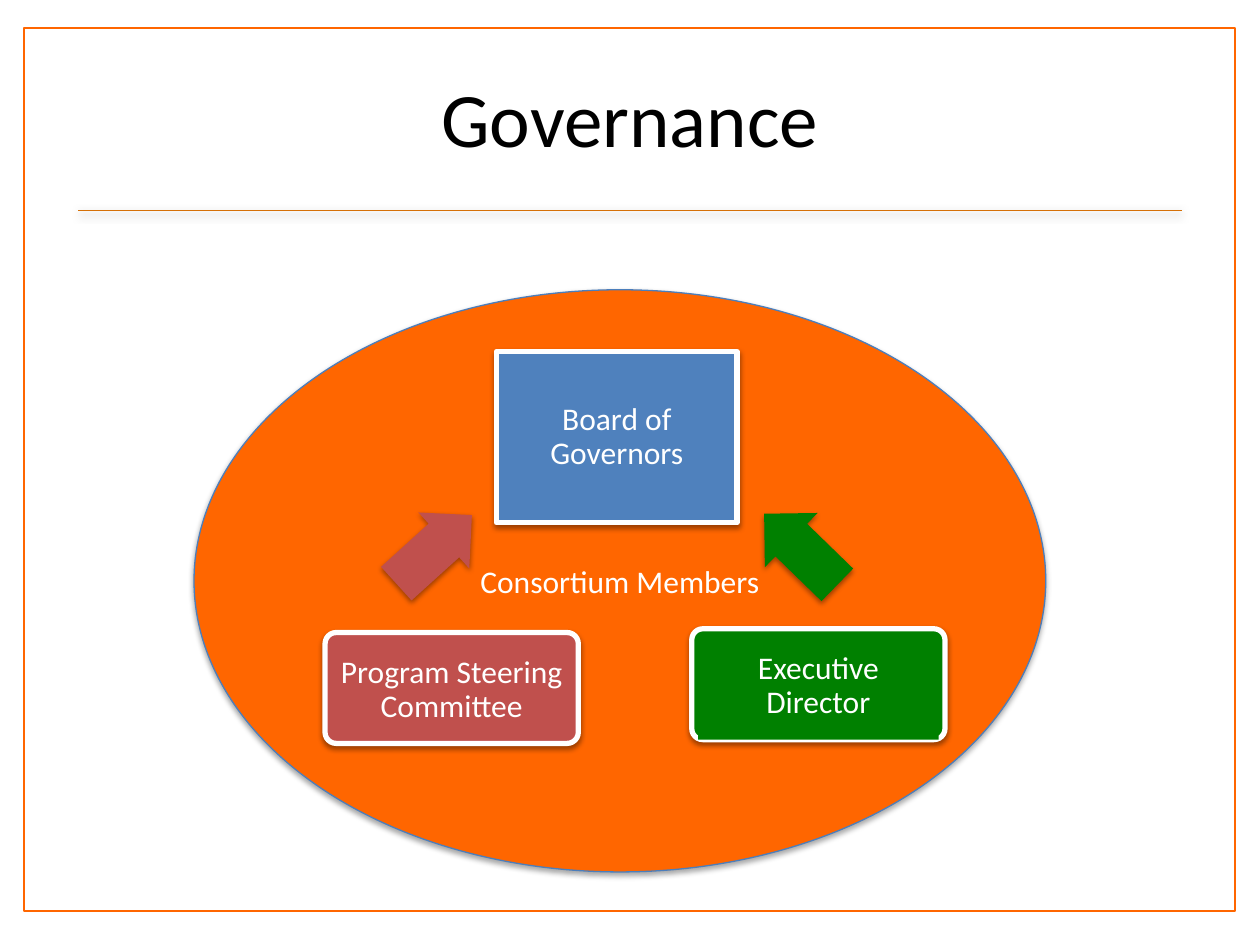
from dataclasses import dataclass
from typing import Optional

from lxml import etree
from pptx import Presentation
from pptx import util as u
from pptx.dml.color import RGBColor
from pptx.enum import shapes, text
from pptx.oxml.ns import qn

PX = u.Inches(1) // 100  # 100 px to the inch


@dataclass(frozen=True)
class Theme:
    font: str = "Calibri"
    title_size: int = 44
    body_size: int = 18
    ink: str = "000000"
    paper: str = "FFFFFF"
    orange: str = "FF6600"
    rule: str = "D57007"
    outline: str = "4B7EBC"
    blue: str = "4F81BD"
    red: str = "C0504D"
    green: str = "008000"


@dataclass(frozen=True)
class Area:
    left: int
    top: int
    width: int
    height: int

    def emu(self) -> tuple:
        return tuple(n * PX for n in (self.left, self.top, self.width, self.height))

    def inset(self, dx: int, dy: int) -> "Area":
        """Narrow both sides by dx and lower the top by dy, keeping the bottom."""
        return Area(self.left + dx, self.top + dy, self.width - 2 * dx, self.height - dy)


@dataclass(frozen=True)
class Shadow:
    alpha: int
    blur: float
    distance: float


@dataclass(frozen=True)
class Office:
    """A body reporting to the board, with the arrow that leads there."""
    name: str
    area: Area
    color: str
    label_fill: Optional[str]
    arrow: Area
    rotation: float


THEME = Theme()
SHAPE = shapes.MSO_SHAPE
RULE_SHADOW = Shadow(35, 5, 1.8)
MEMBERS_SHADOW = Shadow(35, 3.1, 1.8)
BOX_SHADOW = Shadow(38, 3.1, 1.6)

BOARD = Area(394, 279, 191, 136)
OFFICES = [
    Office("Program Steering Committee", Area(258, 502, 201, 88), THEME.red, None,
           Area(304, 406, 81, 60), 137.8),
    Office("Executive Director", Area(549, 499, 201, 88), THEME.green, THEME.green,
           Area(595, 406, 81, 60), 44.2),
]


def rgb(color: str) -> RGBColor:
    return RGBColor.from_string(color)


def cast_shadow(item, shadow: Optional[Shadow]) -> None:
    """Replace the theme shadow by the given one, or by none."""
    properties = item.element.spPr
    effects = properties.find(qn("a:effectLst"))
    if effects is None:
        effects = etree.SubElement(properties, qn("a:effectLst"))
    if shadow:
        outer = etree.SubElement(
            effects, qn("a:outerShdw"), blurRad=str(u.Pt(shadow.blur)),
            dist=str(u.Pt(shadow.distance)), dir="5400000", rotWithShape="0")
        color = etree.SubElement(outer, qn("a:srgbClr"), val="000000")
        etree.SubElement(color, qn("a:alpha"), val=str(shadow.alpha * 1000))


def add_box(page, kind, area: Area, fill: str, line: Optional[str] = None,
            width: float = 1, shadow: Optional[Shadow] = None):
    box = page.shapes.add_shape(kind, *area.emu())
    box.fill.solid()
    box.fill.fore_color.rgb = rgb(fill)
    if line:
        box.line.color.rgb = rgb(line)
        box.line.width = u.Pt(width)
    else:
        box.line.fill.background()
    box.shadow.inherit = False
    cast_shadow(box, shadow)
    return box


def write(box, words: str, size: int, color: str) -> None:
    frame = box.text_frame
    frame.text = words
    frame.word_wrap = True
    frame.vertical_anchor = text.MSO_ANCHOR.MIDDLE
    para = frame.paragraphs[0]
    para.alignment = text.PP_ALIGN.CENTER
    para.font.name = THEME.font
    para.font.size = u.Pt(size)
    para.font.color.rgb = rgb(color)


def write_label(box, words: str) -> None:
    """Write white body text with tight margins and lines."""
    write(box, words, THEME.body_size, THEME.paper)
    frame = box.text_frame
    frame.margin_left = frame.margin_right = 6 * PX
    frame.margin_top = frame.margin_bottom = 6 * PX
    frame.paragraphs[0].line_spacing = 0.9


def add_arrow(page, office: Office) -> None:
    arrow = add_box(page, SHAPE.LEFT_ARROW, office.arrow, office.color, shadow=BOX_SHADOW)
    arrow.adjustments[0] = 0.6
    arrow.adjustments[1] = 0.5
    arrow.rotation = office.rotation


def add_office(page, office: Office) -> None:
    card = add_box(page, SHAPE.ROUNDED_RECTANGLE, office.area, office.color,
                   THEME.paper, 3, BOX_SHADOW)
    card.adjustments[0] = 0.1
    label_area = office.area.inset(5, 4)
    if office.label_fill:
        label = add_box(page, SHAPE.RECTANGLE, label_area, office.label_fill)
    else:
        label = page.shapes.add_textbox(*label_area.emu())
    write_label(label, office.name)


def add_header(page) -> None:
    add_box(page, SHAPE.RECTANGLE, Area(19, 22, 961, 701), THEME.paper, THEME.orange)
    rule = page.shapes.add_connector(
        shapes.MSO_CONNECTOR.STRAIGHT, 62 * PX, 167 * PX, 938 * PX, 167 * PX)
    rule.line.color.rgb = rgb(THEME.rule)
    rule.line.width = u.Pt(1)
    cast_shadow(rule, RULE_SHADOW)
    title = page.shapes.add_textbox(*Area(50, 30, 900, 125).emu())
    write(title, "Governance", THEME.title_size, THEME.ink)


def main() -> None:
    deck = Presentation()
    deck.slide_width, deck.slide_height = 1000 * PX, 750 * PX
    page = deck.slides.add_slide(deck.slide_layouts[6])

    add_header(page)
    members = add_box(page, SHAPE.OVAL, Area(154, 230, 676, 462), THEME.orange,
                      THEME.outline, 0.75, MEMBERS_SHADOW)
    write(members, "Consortium Members", THEME.body_size, THEME.paper)
    board = add_box(page, SHAPE.RECTANGLE, BOARD, THEME.blue, THEME.paper, 3, BOX_SHADOW)
    write_label(board, "Board of Governors")
    for office in OFFICES:
        add_arrow(page, office)
        add_office(page, office)

    deck.save("out.pptx")


if __name__ == "__main__":
    main()
